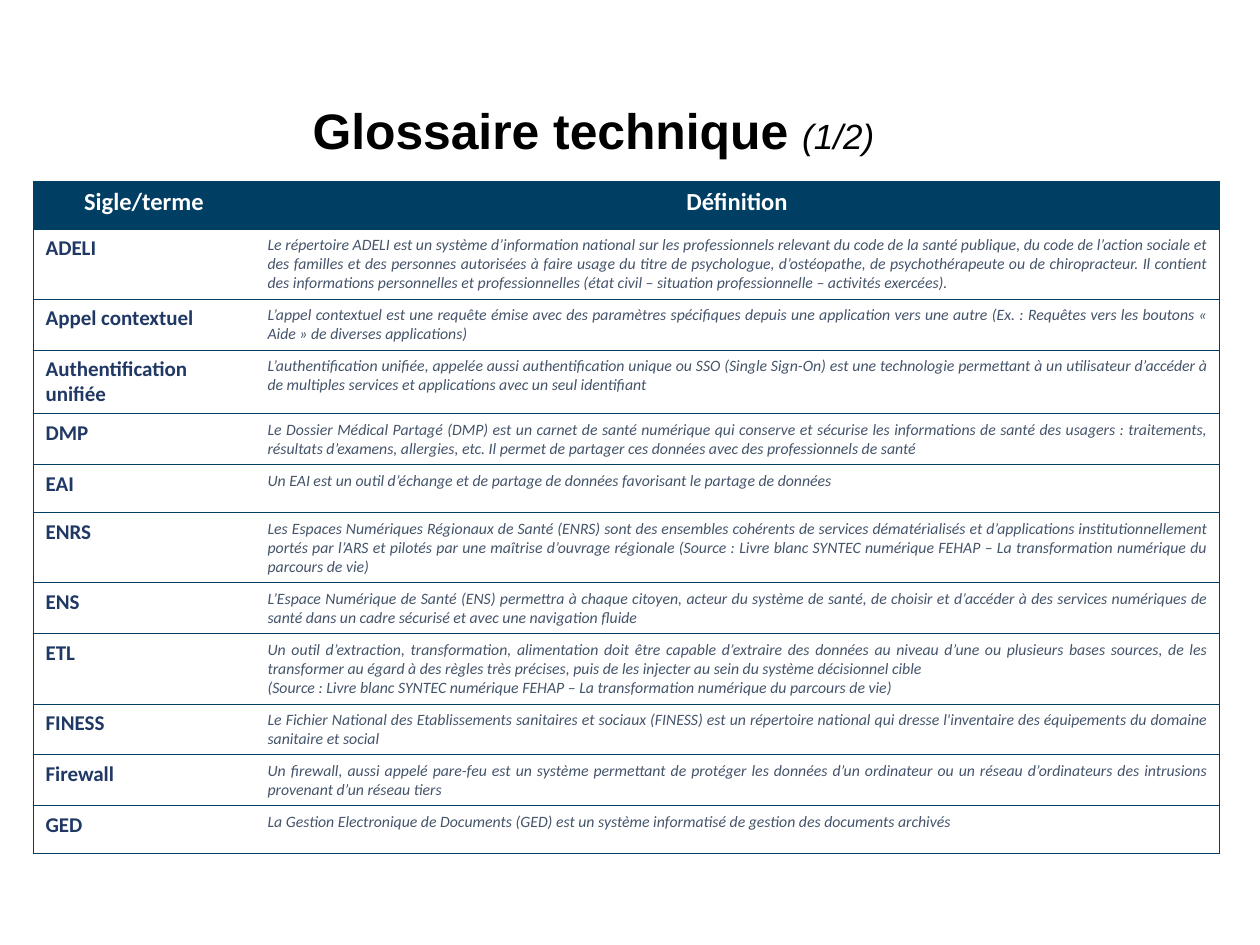
from lxml.etree import SubElement
from pptx import Presentation
from pptx.dml.color import RGBColor
from pptx.enum.text import MSO_ANCHOR, MSO_AUTO_SIZE, PP_ALIGN
from pptx.oxml.ns import qn
from pptx.util import Pt

COLORS = {"navy": "003E64", "term": "203864", "body": "44546A", "white": "FFFFFF", "black": "000000"}
HEADERS = ["Sigle/terme", "Définition"]
GLOSSARY = [
    ("ADELI", ["Le répertoire ADELI est un système d’information national sur les professionnels relevant du code de la santé publique, du code de l’action sociale et des familles et des personnes autorisées à faire usage du titre de psychologue, d’ostéopathe, de psychothérapeute ou de chiropracteur. Il contient des informations personnelles et professionnelles (état civil – situation professionnelle – activités exercées)."]),
    ("Appel contextuel", ["L’appel contextuel est une requête émise avec des paramètres spécifiques depuis une application vers une autre (Ex. : Requêtes vers les boutons « Aide » de diverses applications)"]),
    ("Authentification unifiée", ["L’authentification unifiée, appelée aussi authentification unique ou SSO (Single Sign-On) est une technologie permettant à un utilisateur d’accéder à de multiples services et applications avec un seul identifiant"]),
    ("DMP", ["Le Dossier Médical Partagé (DMP) est un carnet de santé numérique qui conserve et sécurise les informations de santé des usagers : traitements, résultats d’examens, allergies, etc. Il permet de partager ces données avec des professionnels de santé"]),
    ("EAI", ["Un EAI est un outil d’échange et de partage de données favorisant le partage de données"]),
    ("ENRS", ["Les Espaces Numériques Régionaux de Santé (ENRS) sont des ensembles cohérents de services dématérialisés et d’applications institutionnellement portés par l’ARS et pilotés par une maîtrise d’ouvrage régionale (Source : Livre blanc SYNTEC numérique FEHAP – La transformation numérique du parcours de vie)"]),
    ("ENS", ["L’Espace Numérique de Santé (ENS) permettra à chaque citoyen, acteur du système de santé, de choisir et d’accéder à des services numériques de santé dans un cadre sécurisé et avec une navigation fluide"]),
    ("ETL", [
        "Un outil d’extraction, transformation, alimentation doit être capable d’extraire des données au niveau d’une ou plusieurs bases sources, de les transformer au égard à des règles très précises, puis de les injecter au sein du système décisionnel cible",
        "(Source : Livre blanc SYNTEC numérique FEHAP – La transformation numérique du parcours de vie)",
    ]),
    ("FINESS", ["Le Fichier National des Etablissements sanitaires et sociaux (FINESS) est un répertoire national qui dresse l'inventaire des équipements du domaine sanitaire et social"]),
    ("Firewall", ["Un firewall, aussi appelé pare-feu est un système permettant de protéger les données d’un ordinateur ou un réseau d’ordinateurs des intrusions provenant d’un réseau tiers"]),
    ("GED", ["La Gestion Electronique de Documents (GED) est un système informatisé de gestion des documents archivés"]),
]
COLUMN_WIDTHS = [222, 964]
ROW_HEIGHT = 48


def px(value):
    return round(value * 914400 / 126)


def write(paragraph, text, size, color, font="Calibri", bold=False, italic=False, align=PP_ALIGN.JUSTIFY):
    paragraph.alignment = align
    run = paragraph.add_run()
    run.text = text
    run.font.name = font
    run.font.size = Pt(size)
    run.font.bold = bold
    run.font.italic = italic
    run.font.color.rgb = RGBColor.from_string(COLORS[color])


def set_borders(cell, sides):
    properties = cell._tc.get_or_add_tcPr()
    for side in "LRTB":
        line = SubElement(properties, qn(f"a:ln{side}"), w=str(Pt(0.5)))
        if side in sides:
            fill = SubElement(line, qn("a:solidFill"))
            SubElement(fill, qn("a:srgbClr"), val=COLORS["navy"])
        else:
            SubElement(line, qn("a:noFill"))


def add_title(slide):
    title = slide.shapes.title
    title.left, title.top, title.width, title.height = map(px, (300, 92, 638, 82))
    frame = title.text_frame
    frame.auto_size = MSO_AUTO_SIZE.NONE
    frame.vertical_anchor = MSO_ANCHOR.MIDDLE
    paragraph = frame.paragraphs[0]
    paragraph.line_spacing = 0.9
    write(paragraph, "Glossaire technique ", 28.5, "black", font="Arial", bold=True, align=PP_ALIGN.LEFT)
    write(paragraph, "(1/2)", 20, "black", font="Arial", italic=True, align=PP_ALIGN.LEFT)


def add_glossary(slide):
    row_count = len(GLOSSARY) + 1
    frame = slide.shapes.add_table(row_count, len(HEADERS), px(33), px(181),
                                   px(sum(COLUMN_WIDTHS)), px(ROW_HEIGHT * row_count))
    table = frame.table
    table.horz_banding = False
    for column, width in zip(table.columns, COLUMN_WIDTHS):
        column.width = px(width)
    for row in table.rows:
        row.height = px(ROW_HEIGHT)
        for cell, sides in zip(row.cells, ("LTB", "RTB")):
            set_borders(cell, sides)
            cell.fill.background()
    for index, header in enumerate(HEADERS):
        cell = table.cell(0, index)
        cell.fill.solid()
        cell.fill.fore_color.rgb = RGBColor.from_string(COLORS["navy"])
        write(cell.text_frame.paragraphs[0], header, 14, "white", bold=True, align=PP_ALIGN.CENTER)
    for index, (term, definition) in enumerate(GLOSSARY, start=1):
        write(table.cell(index, 0).text_frame.paragraphs[0], term, 12, "term", bold=True)
        text_frame = table.cell(index, 1).text_frame
        for number, text in enumerate(definition):
            paragraph = text_frame.add_paragraph() if number else text_frame.paragraphs[0]
            write(paragraph, text, 9, "body", italic=True)


def main():
    presentation = Presentation()
    presentation.slide_width, presentation.slide_height = px(1260), px(945)
    slide = presentation.slides.add_slide(presentation.slide_layouts[5])
    add_glossary(slide)
    add_title(slide)
    presentation.save("out.pptx")


if __name__ == "__main__":
    main()
